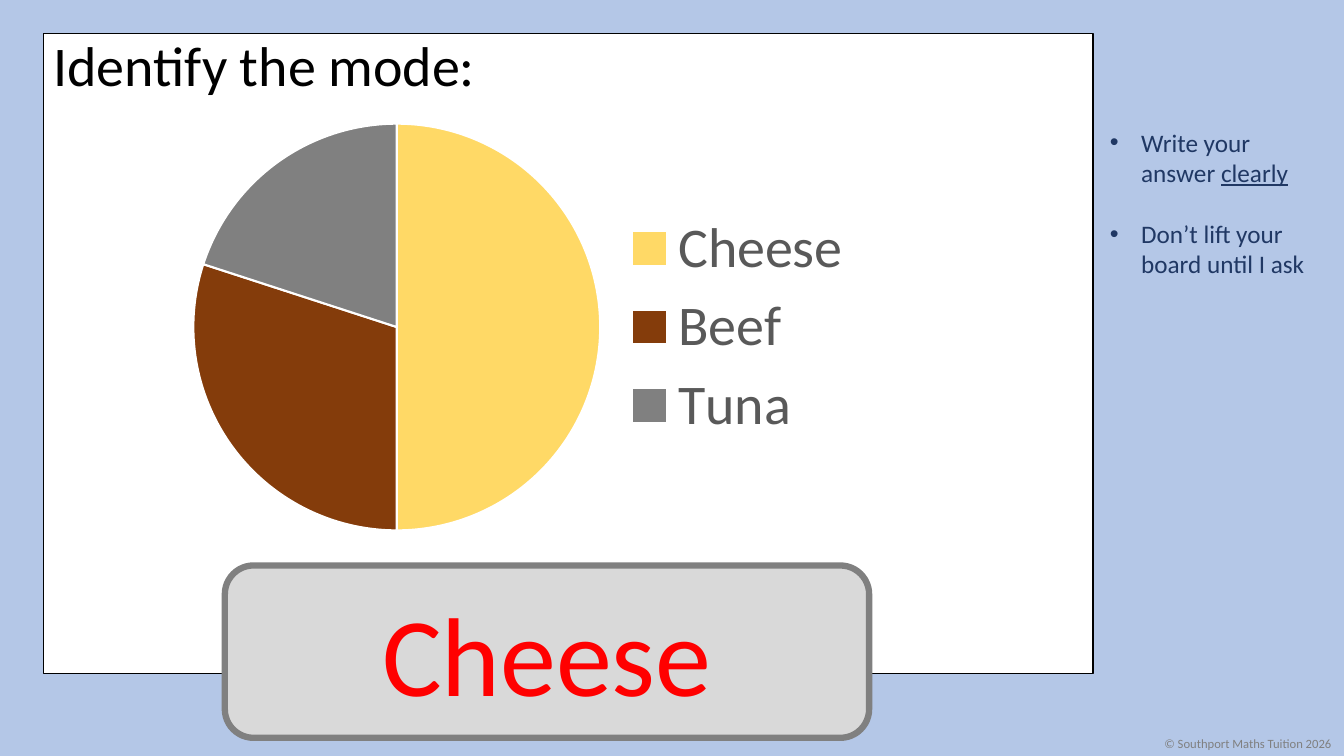
from lxml import etree
from pptx import Presentation
from pptx import util as u
from pptx.chart import data
from pptx.dml import color
from pptx.enum import chart as charts, shapes, text
from pptx.oxml import ns

FONT = "Calibri"
BACKGROUND = "B4C7E7"
TITLE = "Identify the mode:"
ANSWER = "Cheese"
COPYRIGHT = "© Southport Maths Tuition 2026"
REMINDERS = [
    [("Write your answer ", False), ("clearly", True)],
    [("Don’t lift your board until I ask", False)],
]
FILLINGS = [("Cheese", 50, "FFD966"), ("Beef", 30, "843C0B"), ("Tuna", 20, "808080")]

PANEL_BOX = (0.43, 0.33, 10.41, 6.35)
REMINDER_BOX = (10.91, 1.21, 2.32, 1.62)
COPYRIGHT_BOX = (11.45, 7.25, 1.88, 0.25)
ANSWER_BOX = (2.23, 5.61, 6.39, 1.71)
CHART_BOX = (1.78, 1.03, 6.84, 4.43)


def rgb(value):
    return color.RGBColor.from_string(value)


def inches(box):
    return [u.Inches(length) for length in box]


def style_font(font, size, value):
    font.name = FONT
    font.size = u.Pt(size)
    font.color.rgb = rgb(value)


def add_run(paragraph, words, size, value, underline=False):
    run = paragraph.add_run()
    run.text = words
    style_font(run.font, size, value)
    if underline:
        run.font.underline = True


def add_panel(slide, kind, box, fill, line, width):
    shape = slide.shapes.add_shape(kind, *inches(box))
    shape.shadow.inherit = False
    shape.fill.solid()
    shape.fill.fore_color.rgb = rgb(fill)
    shape.line.color.rgb = rgb(line)
    shape.line.width = u.Pt(width)
    return shape


def add_bullet(paragraph):
    properties = paragraph._p.get_or_add_pPr()
    properties.set("marL", str(u.Inches(0.31)))
    properties.set("indent", str(u.Inches(-0.31)))
    etree.SubElement(properties, ns.qn("a:buFont")).set("typeface", "Arial")
    etree.SubElement(properties, ns.qn("a:buChar")).set("char", "•")


def add_title(slide):
    title = slide.shapes.title
    title.left, title.top, title.width, title.height = inches(PANEL_BOX)
    frame = title.text_frame
    frame.auto_size = text.MSO_AUTO_SIZE.NONE
    frame.vertical_anchor = text.MSO_ANCHOR.TOP
    paragraph = frame.paragraphs[0]
    paragraph.alignment = text.PP_ALIGN.LEFT
    paragraph.line_spacing = 0.9
    add_run(paragraph, TITLE, 40, "000000")
    slide.shapes._spTree.append(title._element)


def add_reminders(slide):
    frame = slide.shapes.add_textbox(*inches(REMINDER_BOX)).text_frame
    frame.word_wrap = True
    for index, reminder in enumerate(REMINDERS):
        paragraph = frame.add_paragraph() if index else frame.paragraphs[0]
        add_bullet(paragraph)
        if index:
            paragraph.space_before = u.Pt(22)
        for words, underline in reminder:
            add_run(paragraph, words, 18, "203864", underline)


def add_copyright(slide):
    frame = slide.shapes.add_textbox(*inches(COPYRIGHT_BOX)).text_frame
    frame.word_wrap = False
    add_run(frame.paragraphs[0], COPYRIGHT, 9, "808080")


def add_answer(slide):
    shape = add_panel(slide, shapes.MSO_SHAPE.ROUNDED_RECTANGLE, ANSWER_BOX,
                      "D9D9D9", "808080", 4.5)
    frame = shape.text_frame
    frame.vertical_anchor = text.MSO_ANCHOR.MIDDLE
    paragraph = frame.paragraphs[0]
    paragraph.alignment = text.PP_ALIGN.CENTER
    add_run(paragraph, ANSWER, 80, "FF0000")


def add_pie(slide):
    pie_data = data.CategoryChartData()
    pie_data.categories = [name for name, _, _ in FILLINGS]
    pie_data.add_series("Series 1", [value for _, value, _ in FILLINGS])
    pie = slide.shapes.add_chart(charts.XL_CHART_TYPE.PIE, *inches(CHART_BOX), pie_data).chart
    style_font(pie.font, 10, "000000")
    pie.has_title = False
    pie.has_legend = True
    pie.legend.position = charts.XL_LEGEND_POSITION.RIGHT
    pie.legend.include_in_layout = False
    style_font(pie.legend.font, 40, "595959")
    plot = pie.plots[0]
    plot.vary_by_categories = True
    for index, (_, _, fill) in enumerate(FILLINGS):
        slice_format = plot.series[0].points[index].format
        slice_format.fill.solid()
        slice_format.fill.fore_color.rgb = rgb(fill)
        slice_format.line.color.rgb = rgb("FFFFFF")
        slice_format.line.width = u.Pt(1.5)


def main():
    presentation = Presentation()
    presentation.slide_width = u.Inches(13.33)
    presentation.slide_height = u.Inches(7.5)
    slide = presentation.slides.add_slide(presentation.slide_layouts[5])
    slide.background.fill.solid()
    slide.background.fill.fore_color.rgb = rgb(BACKGROUND)
    add_panel(slide, shapes.MSO_SHAPE.RECTANGLE, PANEL_BOX, "FFFFFF", "000000", 1)
    add_reminders(slide)
    add_copyright(slide)
    add_title(slide)
    add_answer(slide)
    add_pie(slide)
    presentation.save("out.pptx")


if __name__ == "__main__":
    main()
